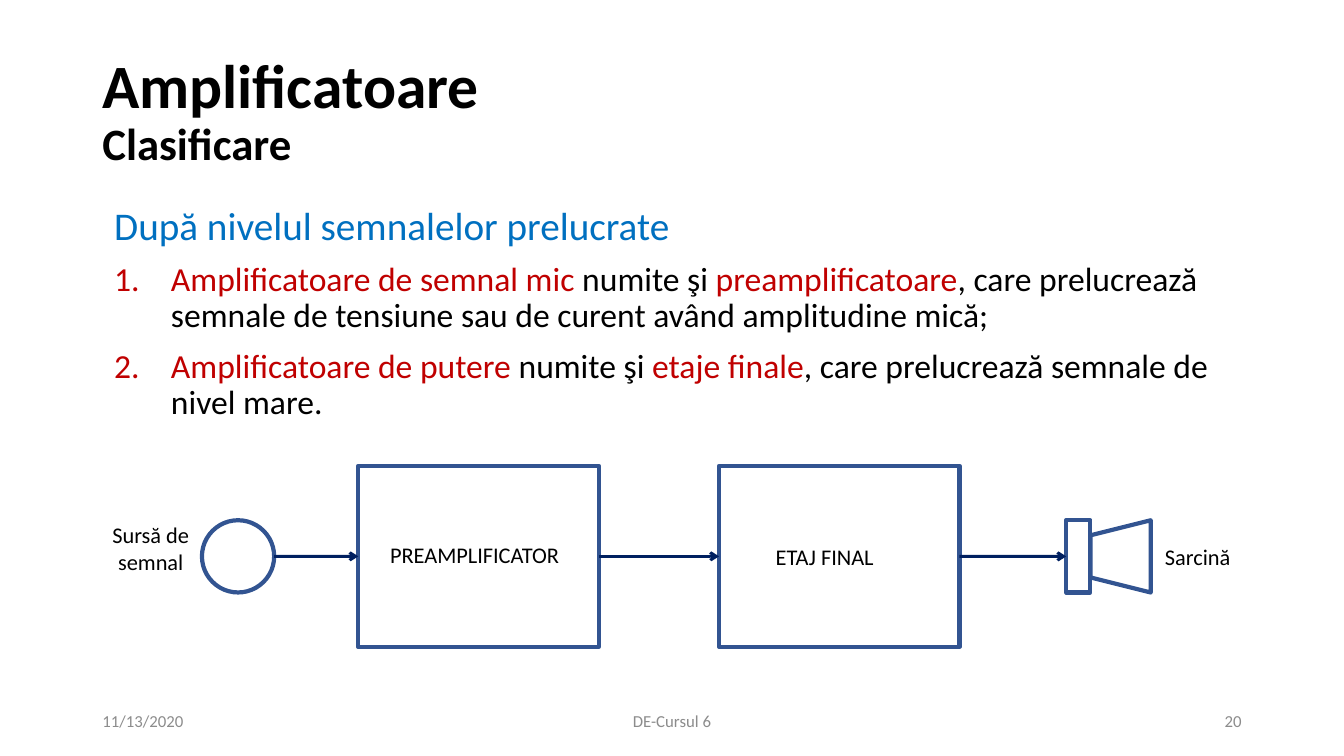
import pptx
import pptx.util
import pptx.dml.color
import pptx.enum.shapes
import pptx.enum.text
import pptx.oxml.ns
import lxml.etree

Cm = pptx.util.Cm
Pt = pptx.util.Pt
SHAPES = pptx.enum.shapes.MSO_SHAPE
ALIGN = pptx.enum.text.PP_ALIGN
ANCHOR = pptx.enum.text.MSO_ANCHOR

BLACK, BLUE, RED, GREY = "000000", "0070C0", "C00000", "8C8C8C"
OUTLINE, SIGNAL = "325491", "002060"


def color(value):
    return pptx.dml.color.RGBColor.from_string(value)


def add_xml(parent, tag, **attributes):
    return lxml.etree.SubElement(parent, pptx.oxml.ns.qn(tag), **attributes)


class SlideBuilder:
    font = "Calibri"

    def __init__(self, slide):
        self.slide = slide

    def style(self, font, size, value):
        font.name = self.font
        font.size = Pt(size)
        font.color.rgb = color(value)

    def frame(self, left, top, width, height, anchor=ANCHOR.TOP, wrap=True):
        box = self.slide.shapes.add_textbox(Cm(left), Cm(top), Cm(width), Cm(height))
        box.text_frame.word_wrap = wrap
        box.text_frame.vertical_anchor = anchor
        return box.text_frame

    def text(self, words, left, top, width, height, size, value,
             align=ALIGN.LEFT, anchor=ANCHOR.TOP, wrap=True):
        frame = self.frame(left, top, width, height, anchor, wrap)
        frame.text = words
        for paragraph in frame.paragraphs:
            paragraph.alignment = align
            self.style(paragraph.font, size, value)

    def title(self, heading, subheading):
        frame = self.frame(2.33, 1.01, 29.21, 3.68, ANCHOR.MIDDLE)
        paragraph = frame.paragraphs[0]
        paragraph.line_spacing = 0.9
        for words, size in ((heading, 44), (subheading, 32)):
            if paragraph.runs:
                paragraph.add_line_break()
            run = paragraph.add_run()
            run.text = words
            self.style(run.font, size, BLACK)
            run.font.bold = True

    def body(self, heading, items):
        frame = self.frame(2.33, 5.07, 29.21, 12.08)
        paragraph = frame.paragraphs[0]
        self.body_paragraph(paragraph, 0.3, 0)
        paragraph.text = heading
        self.style(paragraph.font, 28, BLUE)
        for item in items:
            paragraph = frame.add_paragraph()
            properties = self.body_paragraph(paragraph, 1.73, -1.43)
            add_xml(properties, "a:buFont", typeface="+mj-lt")
            add_xml(properties, "a:buAutoNum", type="arabicPeriod")
            for index, words in enumerate(item):
                run = paragraph.add_run()
                run.text = words
                self.style(run.font, 24, BLACK if index % 2 else RED)

    def body_paragraph(self, paragraph, margin, indent):
        paragraph.line_spacing = 0.9
        paragraph.space_before = Pt(10)
        properties = paragraph._p.get_or_add_pPr()
        properties.set("marL", str(Cm(margin)))
        properties.set("indent", str(Cm(indent)))
        return properties

    def outline(self, kind, left, top, width, height, rotation=0):
        shape = self.slide.shapes.add_shape(kind, Cm(left), Cm(top), Cm(width), Cm(height))
        shape.shadow.inherit = False
        shape.fill.background()
        shape.line.color.rgb = color(OUTLINE)
        shape.line.width = Pt(3)
        shape.rotation = rotation
        return shape

    def arrow(self, start, end, y, source=None, target=None):
        connector = self.slide.shapes.add_connector(
            pptx.enum.shapes.MSO_CONNECTOR.STRAIGHT, Cm(start), Cm(y), Cm(end), Cm(y))
        if source is not None:
            connector.begin_connect(source, 3)
        if target is not None:
            connector.end_connect(target, 1)
        connector.line.color.rgb = color(SIGNAL)
        connector.line.width = Pt(2)
        add_xml(connector.line._get_or_add_ln(), "a:tailEnd", type="arrow")
        add_xml(connector._element.spPr, "a:effectLst")


def main():
    presentation = pptx.Presentation()
    presentation.slide_width = Cm(33.87)
    presentation.slide_height = Cm(19.05)
    builder = SlideBuilder(presentation.slides.add_slide(presentation.slide_layouts[6]))

    builder.title("Amplificatoare", "Clasificare")
    builder.body("După nivelul semnalelor prelucrate", [
        ("Amplificatoare de semnal mic", " numite şi ", "preamplificatoare",
         ", care prelucrează semnale de tensiune sau de curent având amplitudine mică;"),
        ("Amplificatoare de putere", " numite şi ", "etaje finale",
         ", care prelucrează semnale de nivel mare."),
    ])

    for words, left, width, align in (
        ("11/13/2020", 2.33, 7.62, ALIGN.LEFT),
        ("DE-Cursul 6", 11.22, 11.43, ALIGN.CENTER),
        ("20", 23.92, 7.62, ALIGN.RIGHT),
    ):
        builder.text(words, left, 17.65, width, 1.02, 12, GREY, align, ANCHOR.MIDDLE)

    axis = 14.02
    stage_height, symbol, horn_length = 4.56, 1.82, 1.52
    preamplifier, final_stage = [
        builder.outline(SHAPES.RECTANGLE, left, axis - stage_height / 2, 6.06, stage_height)
        for left in (9.03, 18.12)
    ]
    symbol_top = axis - symbol / 2
    source_left = 5.09
    builder.outline(SHAPES.OVAL, source_left, symbol_top, symbol, symbol)
    speaker = builder.outline(SHAPES.RECTANGLE, 26.87, symbol_top, 0.61, symbol)
    builder.outline(SHAPES.TRAPEZOID, 27.33, axis - horn_length / 2, symbol, horn_length, 270)

    for words, left, top, width, height, align in (
        ("PREAMPLIFICATOR", 9.58, 13.51, 4.83, 0.94, ALIGN.LEFT),
        ("ETAJ FINAL", 19.3, 13.56, 3.02, 0.94, ALIGN.LEFT),
        ("Sursă de\nsemnal", 2.57, 13, 2.46, 1.63, ALIGN.CENTER),
        ("Sarcină", 29.11, 13.56, 2.18, 0.94, ALIGN.LEFT),
    ):
        builder.text(words, left, top, width, height, 16, BLACK, align, wrap=False)

    builder.arrow(source_left + symbol, 9.03, axis, target=preamplifier)
    builder.arrow(15.09, 18.12, axis, preamplifier, final_stage)
    builder.arrow(24.18, 26.87, axis, final_stage, speaker)

    presentation.save("out.pptx")


if __name__ == "__main__":
    main()
